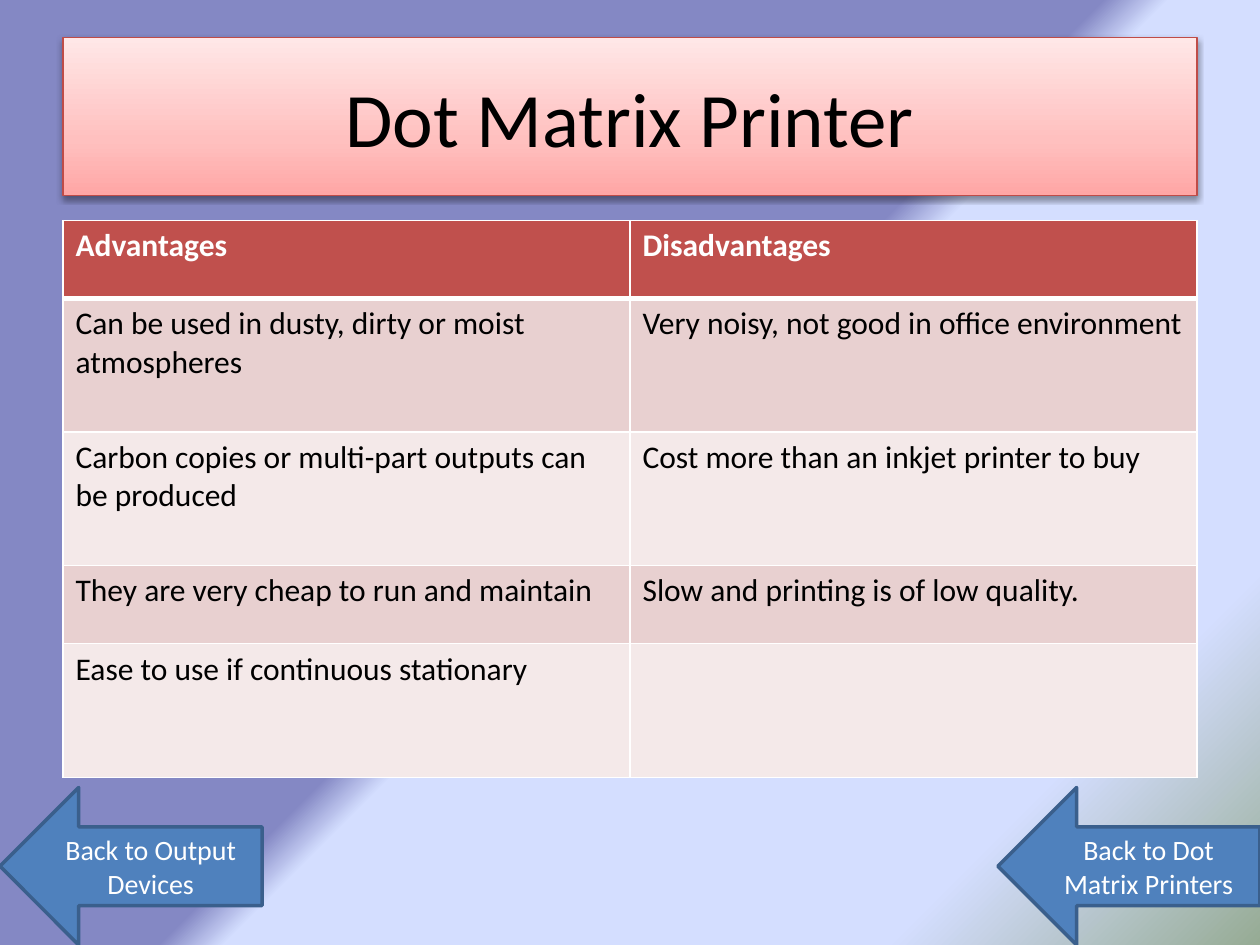
"""Build the dot matrix printer slide with its comparison table and back buttons."""
from dataclasses import dataclass

from lxml.etree import SubElement
from pptx import Presentation
from pptx.dml.color import RGBColor
from pptx.enum.shapes import MSO_SHAPE as Preset
from pptx.enum.text import MSO_ANCHOR as Anchor, PP_ALIGN as Align
from pptx.oxml import parse_xml
from pptx.oxml.ns import nsdecls, qn
from pptx.util import Pt

EMU_PER_PX = 9144
FONT = "Calibri"
WHITE, BLACK = "FFFFFF", "000000"
HEADER_FILL, BAND_FILLS = "C0504D", ("E8D0D0", "F4E9E9")
ROW_HEIGHTS = (62, 106, 106, 62, 106)
COLUMN_WIDTH = 450
ROWS = (
    ("Advantages", "Disadvantages"),
    ("Can be used in dusty, dirty or moist atmospheres",
     "Very noisy, not good in office environment"),
    ("Carbon copies or multi-part outputs can be produced",
     "Cost more than an inkjet printer to buy"),
    ("They are very cheap to run and maintain",
     "Slow and printing is of low quality."),
    ("Ease to use if continuous stationary", ""),
)


@dataclass(frozen=True)
class Box:
    left: int
    top: int
    width: int
    height: int

    def emu(self) -> tuple:
        return tuple(px(n) for n in (self.left, self.top, self.width, self.height))


@dataclass(frozen=True)
class BackButton:
    text: str
    box: Box


BUTTONS = (
    BackButton("Back to Output Devices", Box(0, 625, 208, 125)),
    BackButton("Back to Dot Matrix Printers", Box(792, 625, 208, 125)),
)


def px(length: int) -> int:
    return length * EMU_PER_PX


def color(value: str) -> RGBColor:
    return RGBColor.from_string(value)


def gradient(stops: tuple, angle: int):
    """Return a linear gradient fill element."""
    stop_xml = "".join(
        f'<a:gs pos="{position * 1000}"><a:srgbClr val="{value}"/></a:gs>'
        for position, value in stops)
    return parse_xml(
        f'<a:gradFill {nsdecls("a")} rotWithShape="1"><a:gsLst>{stop_xml}</a:gsLst>'
        f'<a:lin ang="{angle * 60000}" scaled="0"/></a:gradFill>')


def replace_gradient(parent, stops: tuple, angle: int) -> None:
    parent.replace(parent.find(qn("a:gradFill")), gradient(stops, angle))


def format_text(text_frame, size: int, value: str, bold: bool = False) -> None:
    for paragraph in text_frame.paragraphs:
        for run in paragraph.runs:
            run.font.name, run.font.size, run.font.bold = FONT, Pt(size), bold
            run.font.color.rgb = color(value)


def center_text(text_frame) -> None:
    text_frame.word_wrap = True
    text_frame.vertical_anchor = Anchor.MIDDLE
    text_frame.paragraphs[0].alignment = Align.CENTER


def set_line(shape, value: str, width: float) -> None:
    shape.line.color.rgb = color(value)
    shape.line.width = Pt(width)


def paint_background(slide) -> None:
    slide.background.fill.gradient()
    stops = ((50, "8488C4"), (53, "D4DEFF"), (83, "D4DEFF"), (100, "96AB94"))
    replace_gradient(slide.element.find(".//" + qn("p:bgPr")), stops, 45)


def draw_title(slide, text: str, box: Box) -> None:
    title = slide.shapes.title
    title.left, title.top, title.width, title.height = box.emu()
    title.text_frame.text = text
    center_text(title.text_frame)
    format_text(title.text_frame, 44, BLACK)
    title.fill.gradient()
    properties = title.element.spPr
    replace_gradient(properties, ((0, "FFA6A5"), (35, "FFC0BF"), (100, "FFE7E7")), 270)
    set_line(title, "BF4C48", 0.75)
    properties.append(parse_xml(
        f'<a:effectLst {nsdecls("a")}><a:outerShdw blurRad="{Pt(3.1)}" dist="{Pt(1.6)}" '
        f'dir="5400000" rotWithShape="0"><a:srgbClr val="{BLACK}"><a:alpha val="38000"/>'
        '</a:srgbClr></a:outerShdw></a:effectLst>'))


def format_cell(cell, text: str, row: int) -> None:
    """Write one cell with its white borders and band fill."""
    header = row == 0
    cell.text_frame.text = text
    format_text(cell.text_frame, 18, WHITE if header else BLACK, header)
    widths = {"L": 1, "R": 1, "T": 3 if row == 1 else 1, "B": 3 if header else 1}
    properties = cell._tc.get_or_add_tcPr()
    for side, width in widths.items():
        line = SubElement(properties, qn(f"a:ln{side}"), w=str(Pt(width)))
        fill = SubElement(line, qn("a:solidFill"))
        SubElement(fill, qn("a:srgbClr"), val=WHITE)
    cell.fill.solid()
    cell.fill.fore_color.rgb = color(HEADER_FILL if header else BAND_FILLS[(row - 1) % 2])


def draw_table(slide, box: Box) -> None:
    table = slide.shapes.add_table(len(ROWS), len(ROWS[0]), *box.emu()).table
    for column in table.columns:
        column.width = px(COLUMN_WIDTH)
    for index, (texts, height) in enumerate(zip(ROWS, ROW_HEIGHTS)):
        table.rows[index].height = px(height)
        for cell, text in zip(table.rows[index].cells, texts):
            format_cell(cell, text, index)


def draw_button(slide, button: BackButton) -> None:
    arrow = slide.shapes.add_shape(Preset.LEFT_ARROW, *button.box.emu())
    arrow.shadow.inherit = False
    arrow.fill.solid()
    arrow.fill.fore_color.rgb = color("4F81BD")
    set_line(arrow, "3A5F8C", 2)
    arrow.text_frame.text = button.text
    center_text(arrow.text_frame)
    format_text(arrow.text_frame, 16, WHITE)


def main() -> None:
    presentation = Presentation()
    presentation.slide_width, presentation.slide_height = px(1000), px(750)
    slide = presentation.slides.add_slide(presentation.slide_layouts[5])
    paint_background(slide)
    draw_title(slide, "Dot Matrix Printer", Box(50, 30, 900, 125))
    draw_table(slide, Box(50, 175, 2 * COLUMN_WIDTH, sum(ROW_HEIGHTS)))
    for button in BUTTONS:
        draw_button(slide, button)
    presentation.save("out.pptx")


if __name__ == "__main__":
    main()
